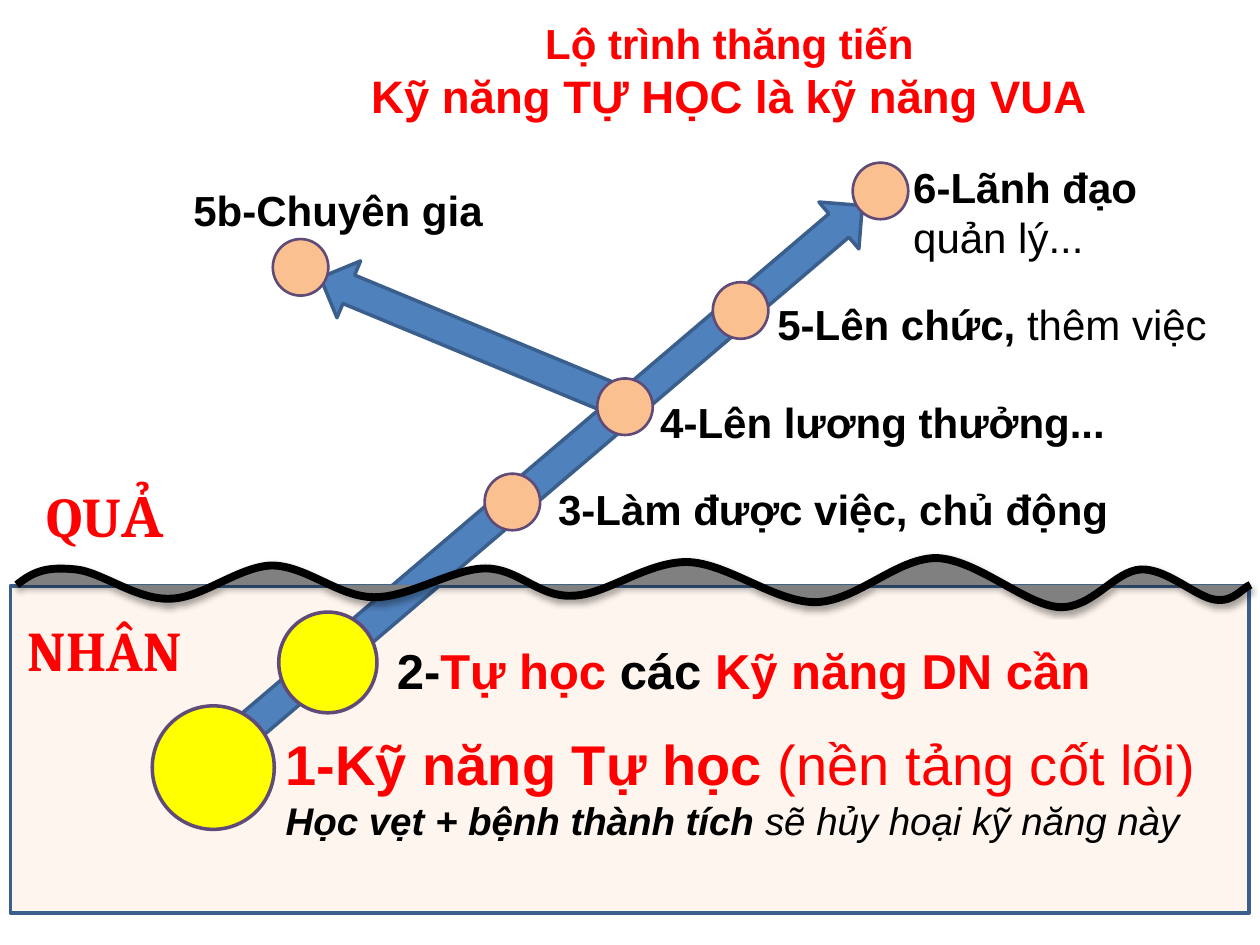
import pptx
import pptx.util
import pptx.dml.color
import pptx.enum.shapes
import pptx.enum.text
import pptx.oxml
import pptx.oxml.ns

Cm, Pt = pptx.util.Cm, pptx.util.Pt
qn, nsdecls = pptx.oxml.ns.qn, pptx.oxml.ns.nsdecls
SHAPE = pptx.enum.shapes.MSO_SHAPE
CENTER = pptx.enum.text.PP_ALIGN.CENTER
COLORS = {
    "ground": "FDEADA", "ground_line": "3A5F8C", "arrow": "4F81BD",
    "skill": "FFFF00", "step": "FAC090", "ring": "5F4A78",
    "wave": "808080", "black": "000000", "red": "FF0000",
}


def rgb(name):
    return pptx.dml.color.RGBColor.from_string(COLORS[name])


def style(sp, fill, line, width):
    sp.shadow.inherit = False
    sp.fill.solid()
    sp.fill.fore_color.rgb = rgb(fill)
    sp.line.color.rgb = rgb(line)
    sp.line.width = Pt(width)


def add_shape(slide, kind, box, fill, line, width, rotation=0):
    sp = slide.shapes.add_shape(kind, *map(Cm, box))
    style(sp, fill, line, width)
    sp.rotation = rotation
    return sp


def add_text(slide, box, paragraphs, wrap=True, align=None, font="Arial", gap=0):
    """Each paragraph is a list of runs: (text, size, color, flags b and i)."""
    tf = slide.shapes.add_textbox(*map(Cm, box)).text_frame
    tf.word_wrap = wrap
    tf.auto_size = pptx.enum.text.MSO_AUTO_SIZE.SHAPE_TO_FIT_TEXT
    for i, runs in enumerate(paragraphs):
        p = tf.add_paragraph() if i else tf.paragraphs[0]
        p.alignment = align
        if i and gap:
            p.space_before = Pt(gap)
        for text, size, color, flags in runs:
            r = p.add_run()
            r.text = text
            r.font.name = font
            r.font.size = Pt(size)
            r.font.color.rgb = rgb(color)
            r.font.bold = "b" in flags
            r.font.italic = "i" in flags


def add_ground(slide, box):
    sp = add_shape(slide, SHAPE.RECTANGLE, box, "ground", "ground_line", 2)
    color = sp.fill._xPr.find(".//" + qn("a:srgbClr"))
    color.append(pptx.oxml.parse_xml(f'<a:alpha {nsdecls("a")} val="46000"/>'))


def add_road(slide, box):
    x, y = box[:2]

    # Arrows: left, top, length, rotation
    for left, top, length, rotation in [(4.32, 3.17, 6.25, 202.5),
                                        (0, 6.22, 17.58, 319.6)]:
        add_shape(slide, SHAPE.RIGHT_ARROW, (x + left, y + top, length, 1.24),
                  "arrow", "ground_line", 2, rotation)

    # Labels: box, wrap, paragraphs
    labels = [
        ((3.61, 11.58, 19.15, 2.57), True, [
            [("1-Kỹ năng Tự học ", 32, "red", "b"), ("(nền tảng cốt lõi)", 32, "red", "")],
            [("Học vẹt + bệnh thành tích ", 22, "black", "bi"),
             ("sẽ hủy hoại kỹ năng này", 22, "black", "i")]]),
        ((5.85, 9.78, 14.66, 1.45), False, [
            [("2-", 28, "black", "b"), ("Tự học", 28, "red", "b"),
             (" các ", 28, "black", "b"), ("Kỹ năng DN cần", 28, "red", "b")]]),
        ((9.1, 6.63, 11.71, 1.27), False,
         [[("3-Làm được việc, chủ động", 24, "black", "b")]]),
        ((11.16, 4.87, 9.55, 1.27), False,
         [[("4-Lên lương thưởng...", 24, "black", "b")]]),
        ((13.52, 2.89, 9.68, 1.27), True,
         [[("5-Lên chức, ", 24, "black", "b"), ("thêm việc", 24, "black", "")]]),
        ((16.26, 0.13, 5.08, 2.31), False,
         [[("6-Lãnh đạo", 24, "black", "b")], [("quản lý...", 24, "black", "")]]),
        ((1.75, 0.6, 7.16, 1.27), True,
         [[("5b-Chuyên gia", 24, "black", "b")]]),
    ]
    for (left, top, width, height), wrap, paragraphs in labels:
        add_text(slide, (x + left, y + top, width, height), paragraphs, wrap)

    # Milestones: circle corner, circle size, fill, line width
    small = (1.12, 1.14)
    circles = [
        ((1.17, 11.23), (2.46, 2.49), "skill", 2),
        ((3.72, 9.34), (1.98, 2.03), "skill", 2),
        ((7.87, 6.55), small, "step", 1.5),
        ((10.14, 4.63), small, "step", 1.5),
        ((12.47, 2.69), small, "step", 1.5),
        ((15.29, 0.28), small, "step", 1.5),
        ((3.6, 1.82), small, "step", 1.5),
    ]
    for (left, top), size, fill, width in circles:
        add_shape(slide, SHAPE.OVAL, (x + left, y + top, *size), fill, "ring", width)


def add_wave(slide, box):
    x, y = box[:2]
    start = (0.13, -0.02)
    # Each curve: first handle, second handle, end
    curves = [
        ((0.51, -0.33), (0.79, -0.38), (1.32, -0.33)),
        ((1.83, -0.28), (2.54, 0.28), (3.2, 0.26)),
        ((3.86, 0.26), (4.58, -0.38), (5.26, -0.41)),
        ((5.97, -0.41), (6.61, 0.23), (7.34, 0.23)),
        ((8.06, 0.23), (8.92, -0.35), (9.58, -0.35)),
        ((10.24, -0.35), (10.65, 0.23), (11.31, 0.2)),
        ((11.99, 0.2), (12.8, -0.48), (13.64, -0.48)),
        ((14.46, -0.46), (15.4, 0.33), (16.23, 0.33)),
        ((17.07, 0.31), (17.86, -0.56), (18.67, -0.56)),
        ((19.49, -0.53), (20.45, 0.38), (21.14, 0.43)),
        ((21.82, 0.46), (22.25, -0.3), (22.79, -0.33)),
        ((23.32, -0.35), (23.9, 0.23), (24.29, 0.28)),
        ((24.67, 0.33), (24.82, 0.05), (25, -0.02)),
    ]
    builder = slide.shapes.build_freeform(Cm(x + start[0]), Cm(y + start[1]))
    builder.add_line_segments([(Cm(x + px), Cm(y + py))
                               for curve in curves for px, py in curve], close=False)
    sp = builder.convert_to_shape()
    style(sp, "wave", "black", 4.5)

    # Join every three line points into one curve
    outline = sp._element.spPr.find(".//" + qn("a:path"))
    lines = outline.findall(qn("a:lnTo"))
    for i in range(0, len(lines), 3):
        curve = pptx.oxml.parse_xml(f'<a:cubicBezTo {nsdecls("a")}/>')
        for line in lines[i:i + 3]:
            curve.append(line[0])
            outline.remove(line)
        outline.append(curve)

    # Soft shadow below
    effects = sp._element.spPr.find(qn("a:effectLst"))
    effects.append(pptx.oxml.parse_xml(
        f'<a:outerShdw {nsdecls("a")} blurRad="{Pt(3.1)}" '
        f'dist="{Pt(1.8)}" dir="5400000" rotWithShape="0">'
        f'<a:srgbClr val="{COLORS["black"]}"><a:alpha val="35000"/></a:srgbClr>'
        '</a:outerShdw>'))


def add_sides(slide, box):
    add_text(slide, box, [[("QUẢ", 32, "red", "b")], [("NHÂN", 32, "red", "b")]],
             align=CENTER, font="Cambria", gap=38.5)


def add_title(slide, box):
    add_text(slide, box, [[("Lộ trình thăng tiến", 24, "red", "b")],
                          [("Kỹ năng TỰ HỌC là kỹ năng VUA", 26, "red", "b")]],
             align=CENTER)


def main():
    prs = pptx.Presentation()
    prs.slide_width, prs.slide_height = Cm(25.4), Cm(19.05)
    slide = prs.slides.add_slide(prs.slide_layouts[6])
    ground = (0.21, 11.81, 24.97, 6.6)
    add_ground(slide, ground)
    add_road(slide, (1.9, 3, 23.2, 14.15))
    add_wave(slide, ground)
    add_sides(slide, (-0.07, 9.58, 4.37, 4.37))
    add_title(slide, (4.01, 0.23, 21.39, 2.39))
    prs.save("out.pptx")


if __name__ == "__main__":
    main()
